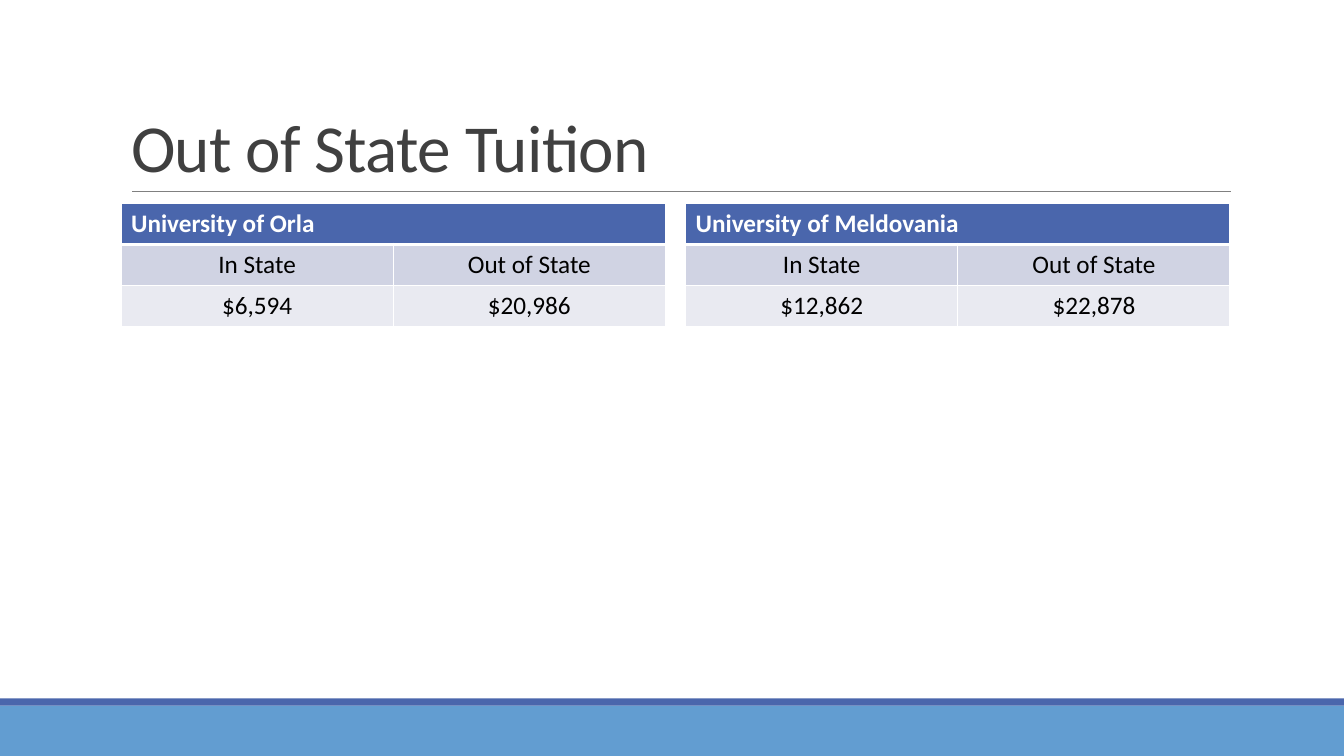
from dataclasses import dataclass

from lxml.etree import SubElement
from pptx import Presentation
from pptx.dml.color import RGBColor
from pptx.enum.shapes import MSO_CONNECTOR, MSO_SHAPE
from pptx.enum.text import MSO_ANCHOR, MSO_AUTO_SIZE, PP_ALIGN
from pptx.oxml.ns import qn
from pptx.slide import Slide
from pptx.table import _Cell
from pptx.text.text import TextFrame
from pptx.util import Inches, Pt

WHITE, BLACK, NAVY = "FFFFFF", "000000", "4A66AC"
ROW_FILLS = (NAVY, "D0D3E3", "E9EAF1")
COL_W, ROW_H = 2.7, 1.22 / 3
TABLE_TOP = 2.02


@dataclass
class Band:
    top: float
    height: float
    fill: str


@dataclass
class School:
    left: float
    name: str
    home: str
    away: str


BANDS = (Band(7, 0.5, "629DD1"), Band(6.93, 0.07, NAVY))
SCHOOLS = (
    School(1.2, "University of Orla", "$6,594", "$20,986"),
    School(6.8, "University of Meldovania", "$12,862", "$22,878"),
)


def color(code: str) -> RGBColor:
    return RGBColor.from_string(code)


def write(frame: TextFrame, text: str, *, size: float = 18, fill: str = BLACK,
          bold: bool = False, align: PP_ALIGN = PP_ALIGN.LEFT,
          leading: float = 1.0, tracking: float = 0) -> None:
    line = frame.paragraphs[0]
    line.alignment, line.line_spacing = align, leading
    run = line.add_run()
    run.text = text
    font = run.font
    font.name, font.size, font.bold = "Calibri", Pt(size), bold
    font.color.rgb = color(fill)
    if tracking:
        font._element.set("spc", str(round(tracking * 100)))


def add_band(slide: Slide, band: Band) -> None:
    shape = slide.shapes.add_shape(
        MSO_SHAPE.RECTANGLE, 0, Inches(band.top), Inches(13.33), Inches(band.height))
    shape.shadow.inherit = False
    shape.fill.solid()
    shape.fill.fore_color.rgb = color(band.fill)
    shape.line.fill.background()


def add_rule(slide: Slide) -> None:
    rule = slide.shapes.add_connector(
        MSO_CONNECTOR.STRAIGHT, Inches(1.31), Inches(1.9), Inches(12.21), Inches(1.9))
    rule.line.color.rgb = color("808080")
    rule.line.width = Pt(0.5)
    SubElement(rule._element.spPr, qn("a:effectLst"))


def add_title(slide: Slide, text: str) -> None:
    title = slide.shapes.title
    title.left, title.top = Inches(1.2), Inches(0.31)
    title.width, title.height = Inches(11), Inches(1.59)
    frame = title.text_frame
    frame.auto_size = MSO_AUTO_SIZE.NONE
    frame.vertical_anchor = MSO_ANCHOR.BOTTOM
    write(frame, text, size=48, fill="404040", leading=0.85, tracking=-0.5)


def set_edges(cell: _Cell, top: float, bottom: float) -> None:
    """Draw white cell borders; they must come before the cell fill."""
    props = cell._tc.get_or_add_tcPr()
    for side, width in (("L", 1), ("R", 1), ("T", top), ("B", bottom)):
        edge = SubElement(props, qn(f"a:ln{side}"), w=str(Pt(width)))
        SubElement(SubElement(edge, qn("a:solidFill")), qn("a:srgbClr"), val=WHITE)


def add_school(slide: Slide, school: School) -> None:
    rows = ((school.name,), ("In State", "Out of State"), (school.home, school.away))
    table = slide.shapes.add_table(
        len(rows), 2, Inches(school.left), Inches(TABLE_TOP),
        Inches(2 * COL_W), Inches(len(rows) * ROW_H)).table
    for col in table.columns:
        col.width = Inches(COL_W)
    for r, (texts, fill) in enumerate(zip(rows, ROW_FILLS)):
        table.rows[r].height = Inches(ROW_H)
        for c in range(2):
            cell = table.cell(r, c)
            set_edges(cell, 3 if r == 1 else 1, 3 if r == 0 else 1)
            cell.fill.solid()
            cell.fill.fore_color.rgb = color(fill)
        head = r == 0
        for c, text in enumerate(texts):
            write(table.cell(r, c).text_frame, text, bold=head,
                  fill=WHITE if head else BLACK,
                  align=PP_ALIGN.LEFT if head else PP_ALIGN.CENTER)
    table.cell(0, 0).merge(table.cell(0, 1))


def main() -> None:
    deck = Presentation()
    deck.slide_width, deck.slide_height = Inches(13.33), Inches(7.5)
    slide = deck.slides.add_slide(deck.slide_layouts.get_by_name("Title Only"))
    for band in BANDS:
        add_band(slide, band)
    add_rule(slide)
    add_title(slide, "Out of State Tuition")
    for school in SCHOOLS:
        add_school(slide, school)
    deck.save("out.pptx")


if __name__ == "__main__":
    main()
